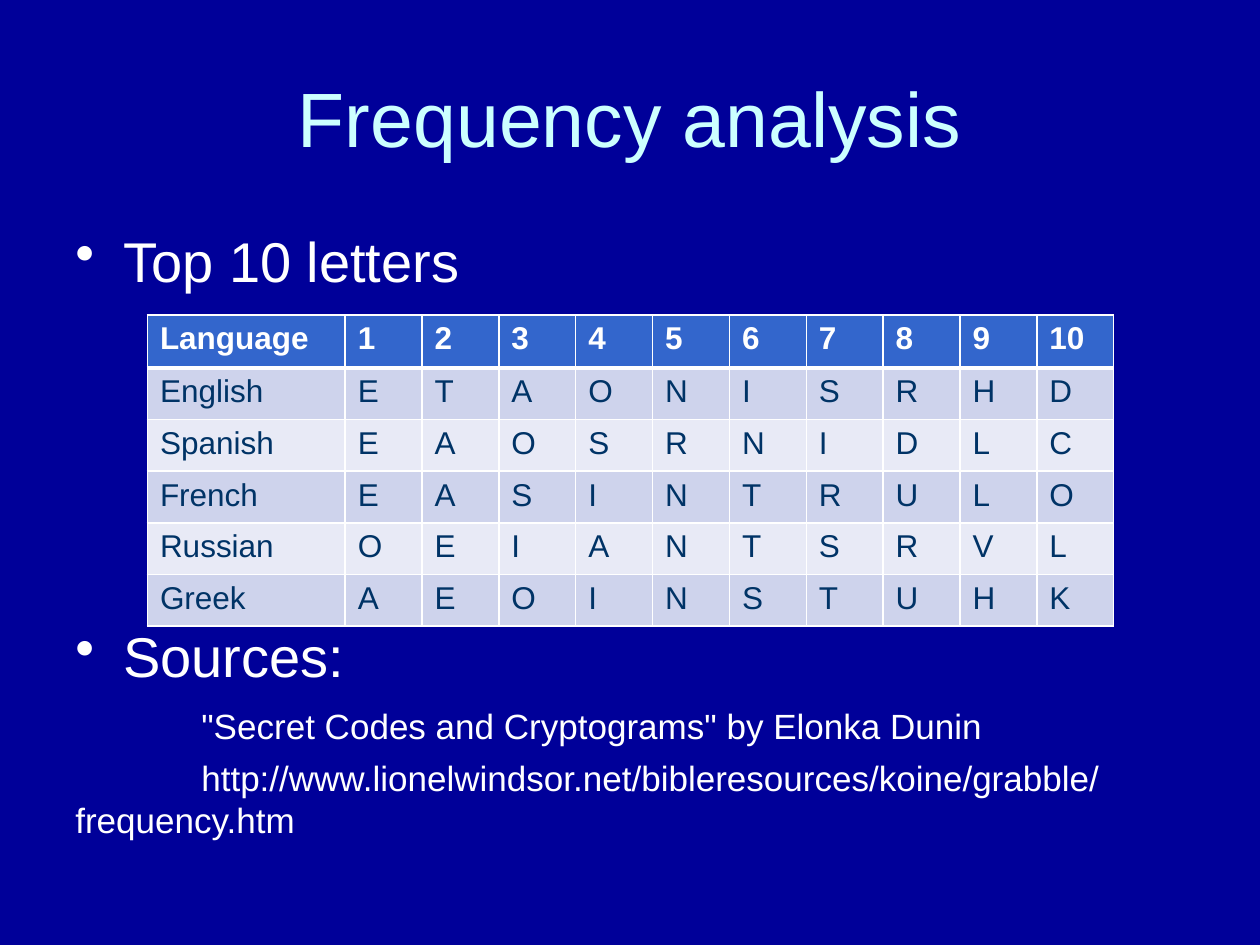
from dataclasses import dataclass

from lxml import etree
from pptx import Presentation
from pptx.dml.color import RGBColor
from pptx.enum.text import MSO_ANCHOR, PP_ALIGN
from pptx.oxml.ns import qn
from pptx.util import Inches, Pt

CENTER = PP_ALIGN.CENTER
MIDDLE = MSO_ANCHOR.MIDDLE


@dataclass(frozen=True)
class Theme:
    font: str = "Arial"
    background: str = "000099"
    title: str = "CCFFFF"
    white: str = "FFFFFF"
    header: str = "3366CC"
    cell_text: str = "003366"
    bands: tuple = ("CED3EC", "E8EAF6")
    title_size: int = 44
    body_size: int = 32
    source_size: int = 20
    table_size: int = 18


THEME = Theme()

HEADINGS = ["Language", *map(str, range(1, 11))]
LETTERS = {
    "English": "ETAONISRHD",
    "Spanish": "EAOSRNIDLC",
    "French": "EASINTRULO",
    "Russian": "OEIANTSRVL",
    "Greek": "AEOINSTUHK",
}

# text, size, bulleted, space before in points; "Sources:" leaves room for the table
BODY = [
    ("Top 10 letters", THEME.body_size, True, 0),
    ("Sources:", THEME.body_size, True, 187),
    ('"Secret Codes and Cryptograms" by Elonka Dunin', THEME.source_size, False, 9.4),
    ("http://www.lionelwindsor.net/bibleresources/koine/grabble/frequency.htm",
     THEME.source_size, False, 5.6),
]


def add_run(paragraph, text, size, color, bold=False):
    run = paragraph.add_run()
    run.text = text
    run.font.name = THEME.font
    run.font.size = Pt(size)
    run.font.bold = bold
    run.font.color.rgb = RGBColor.from_string(color)


def set_borders(cell, widths):
    """Draw white borders; widths maps a side's tag to points."""
    properties = cell._tc.get_or_add_tcPr()
    for position, (side, width) in enumerate(widths.items()):
        line = etree.Element(qn(f"a:{side}"), w=str(Pt(width)))
        fill = etree.SubElement(line, qn("a:solidFill"))
        etree.SubElement(fill, qn("a:srgbClr"), val=THEME.white)
        properties.insert(position, line)


presentation = Presentation()
presentation.slide_width = Inches(10)
presentation.slide_height = Inches(7.5)
slide = presentation.slides.add_slide(presentation.slide_layouts[6])
slide.background.fill.solid()
slide.background.fill.fore_color.rgb = RGBColor.from_string(THEME.background)

# Title
title = slide.shapes.add_textbox(Inches(0.5), Inches(0.3), Inches(9), Inches(1.25))
title.text_frame.word_wrap = True
title.text_frame.vertical_anchor = MIDDLE
paragraph = title.text_frame.paragraphs[0]
paragraph.alignment = CENTER
add_run(paragraph, "Frequency analysis", THEME.title_size, THEME.title)

# Bullets and sources
body = slide.shapes.add_textbox(Inches(0.5), Inches(1.75), Inches(9), Inches(5.33))
body.text_frame.word_wrap = True
for index, (text, size, bulleted, space) in enumerate(BODY):
    paragraph = body.text_frame.add_paragraph() if index else body.text_frame.paragraphs[0]
    paragraph.space_before = Pt(space)
    properties = paragraph._p.get_or_add_pPr()
    if bulleted:
        properties.set("marL", str(Inches(0.38)))
        properties.set("indent", str(Inches(-0.38)))
        etree.SubElement(properties, qn("a:buChar"), char="•")
    else:
        properties.set("indent", str(Inches(1)))
    add_run(paragraph, text, size, THEME.white)

# Letter table
rows = [HEADINGS] + [[language, *letters] for language, letters in LETTERS.items()]
table = slide.shapes.add_table(
    len(rows), len(HEADINGS), Inches(1.17), Inches(2.5), Inches(7.63), Inches(2.44)
).table
for index, column in enumerate(table.columns):
    column.width = Inches(0.61 if index else 1.57)
for index, row in enumerate(table.rows):
    row.height = Inches(0.41 if index else 0.42)

for row_index, values in enumerate(rows):
    is_header = row_index == 0
    fill_color = THEME.header if is_header else THEME.bands[(row_index - 1) % 2]
    text_color = THEME.white if is_header else THEME.cell_text
    borders = {"lnL": 1, "lnR": 1,
               "lnT": 3 if row_index == 1 else 1,
               "lnB": 3 if is_header else 1}
    for column_index, value in enumerate(values):
        cell = table.cell(row_index, column_index)
        cell.fill.solid()
        cell.fill.fore_color.rgb = RGBColor.from_string(fill_color)
        set_borders(cell, borders)
        add_run(cell.text_frame.paragraphs[0], value, THEME.table_size, text_color, is_header)

presentation.save("out.pptx")
